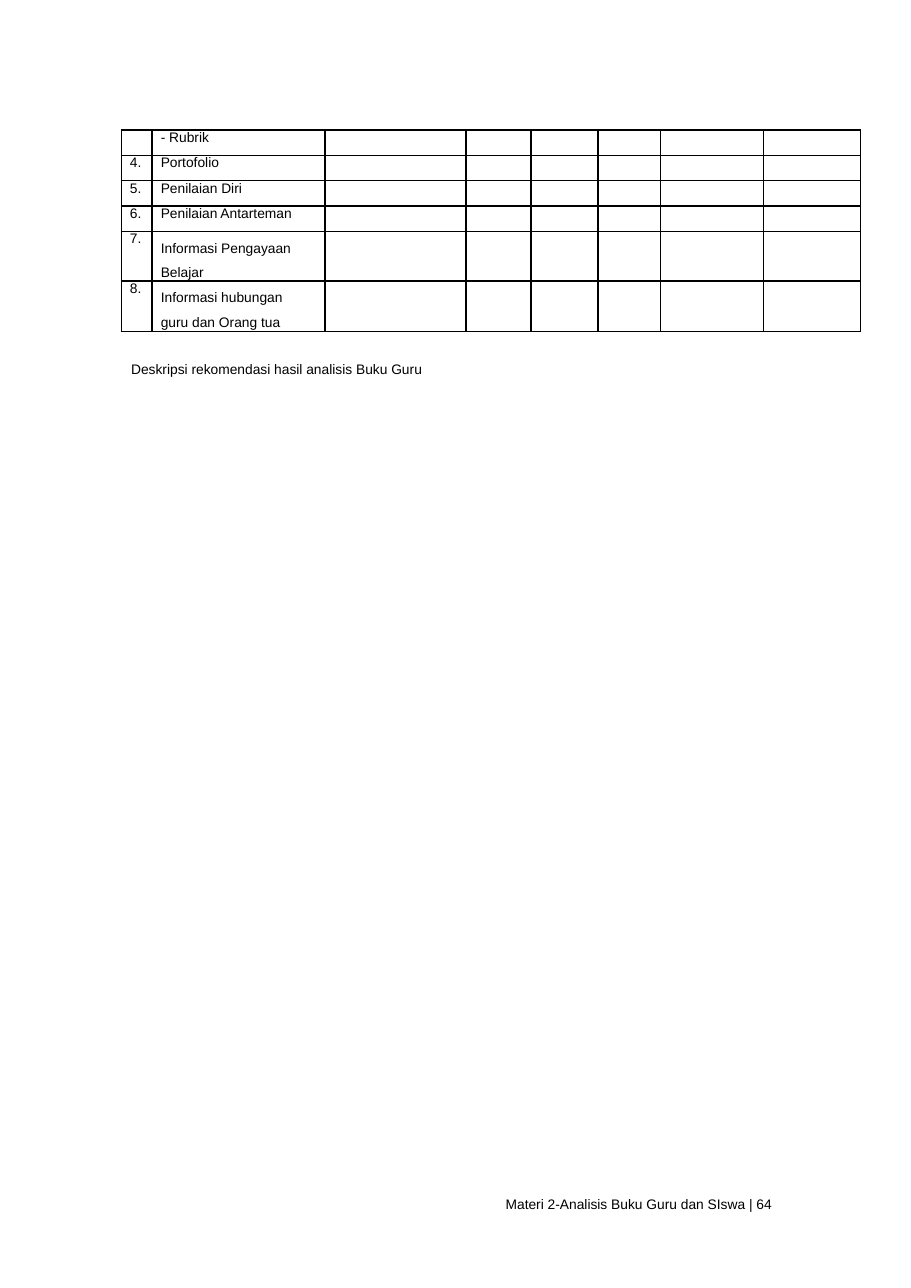
from dataclasses import dataclass

from lxml.etree import SubElement
from pptx import Presentation
from pptx.dml.color import RGBColor
from pptx.enum.text import MSO_ANCHOR, PP_ALIGN as Align
from pptx.oxml.ns import qn
from pptx.util import Inches, Pt

BLACK = "000000"
FONT_SIZE = 9
BORDER_WIDTH = 1
COLUMN_WIDTHS = [0.28, 1.57, 1.28, 0.59, 0.61, 0.57, 0.93, 0.88]


@dataclass
class Aspect:
    number: str
    name: str
    height: float = 0.23
    line_spacing: float | None = None


@dataclass
class Caption:
    text: str
    left: float
    top: float
    width: float
    height: float
    align: Align = Align.LEFT


ASPECTS = [
    Aspect("", "- Rubrik"),
    Aspect("4.", "Portofolio"),
    Aspect("5.", "Penilaian Diri"),
    Aspect("6.", "Penilaian Antarteman"),
    Aspect("7.", "Informasi Pengayaan Belajar", 0.45, 16.1),
    Aspect("8.", "Informasi hubungan guru dan Orang tua", 0.46, 16.3),
]
CAPTIONS = [
    Caption("Deskripsi rekomendasi hasil analisis Buku Guru", 1.19, 3.27, 2.88, 0.17),
    Caption("Materi 2-Analisis Buku Guru dan SIswa | 64", 4.59, 10.85, 2.71, 0.14,
            Align.JUSTIFY),
]


def write(para, text: str, *, size: float = FONT_SIZE, font: str = "Arial",
          color: str = BLACK, align: Align = Align.LEFT,
          line_spacing: float | None = None) -> None:
    para.alignment = align
    if line_spacing:
        para.line_spacing = Pt(line_spacing)
    span = para.add_run()
    span.text = text
    span.font.size = Pt(size)
    span.font.name = font
    span.font.color.rgb = RGBColor.from_string(color)


def clear_margins(holder) -> None:
    holder.margin_left = holder.margin_right = 0
    holder.margin_top = holder.margin_bottom = 0


def add_borders(cell, color: str = BLACK) -> None:
    properties = cell._tc.get_or_add_tcPr()
    for side in ("lnL", "lnR", "lnT", "lnB"):
        line = SubElement(properties, qn(f"a:{side}"), w=str(Pt(BORDER_WIDTH)))
        fill = SubElement(line, qn("a:solidFill"))
        SubElement(fill, qn("a:srgbClr"), val=color)


def fill_cell(cell, text: str, line_spacing: float | None) -> None:
    clear_margins(cell)
    cell.vertical_anchor = MSO_ANCHOR.TOP
    add_borders(cell)
    cell.fill.background()
    para = cell.text_frame.paragraphs[0]
    if text:
        para._p.get_or_add_pPr().set("marL", str(Inches(0.08)))
        write(para, text, line_spacing=line_spacing)
    else:
        # Keeps the empty cell from stretching its row.
        SubElement(para._p, qn("a:endParaRPr"), sz=str(FONT_SIZE * 100))


def add_aspect_table(page) -> None:
    frame = page.shapes.add_table(
        len(ASPECTS), len(COLUMN_WIDTHS), Inches(1.1), Inches(1.18),
        Inches(sum(COLUMN_WIDTHS)), Inches(sum(a.height for a in ASPECTS)))
    table = frame.table
    table.first_row = table.horz_banding = False
    for column, width in zip(table.columns, COLUMN_WIDTHS):
        column.width = Inches(width)
    for row, aspect in zip(table.rows, ASPECTS):
        row.height = Inches(aspect.height)
        for index, cell in enumerate(row.cells):
            text = {0: aspect.number, 1: aspect.name}.get(index, "")
            fill_cell(cell, text, aspect.line_spacing if index == 1 else None)
        row.cells[1].margin_right = Inches(0.2)


def add_caption(page, caption: Caption) -> None:
    box = page.shapes.add_textbox(Inches(caption.left), Inches(caption.top),
                                  Inches(caption.width), Inches(caption.height))
    clear_margins(box.text_frame)
    box.text_frame.word_wrap = True
    write(box.text_frame.paragraphs[0], caption.text, align=caption.align)


def main() -> None:
    deck = Presentation()
    deck.slide_width, deck.slide_height = Inches(8.27), Inches(11.69)
    page = deck.slides.add_slide(deck.slide_layouts[6])
    add_aspect_table(page)
    for caption in CAPTIONS:
        add_caption(page, caption)
    deck.save("out.pptx")


if __name__ == "__main__":
    main()
